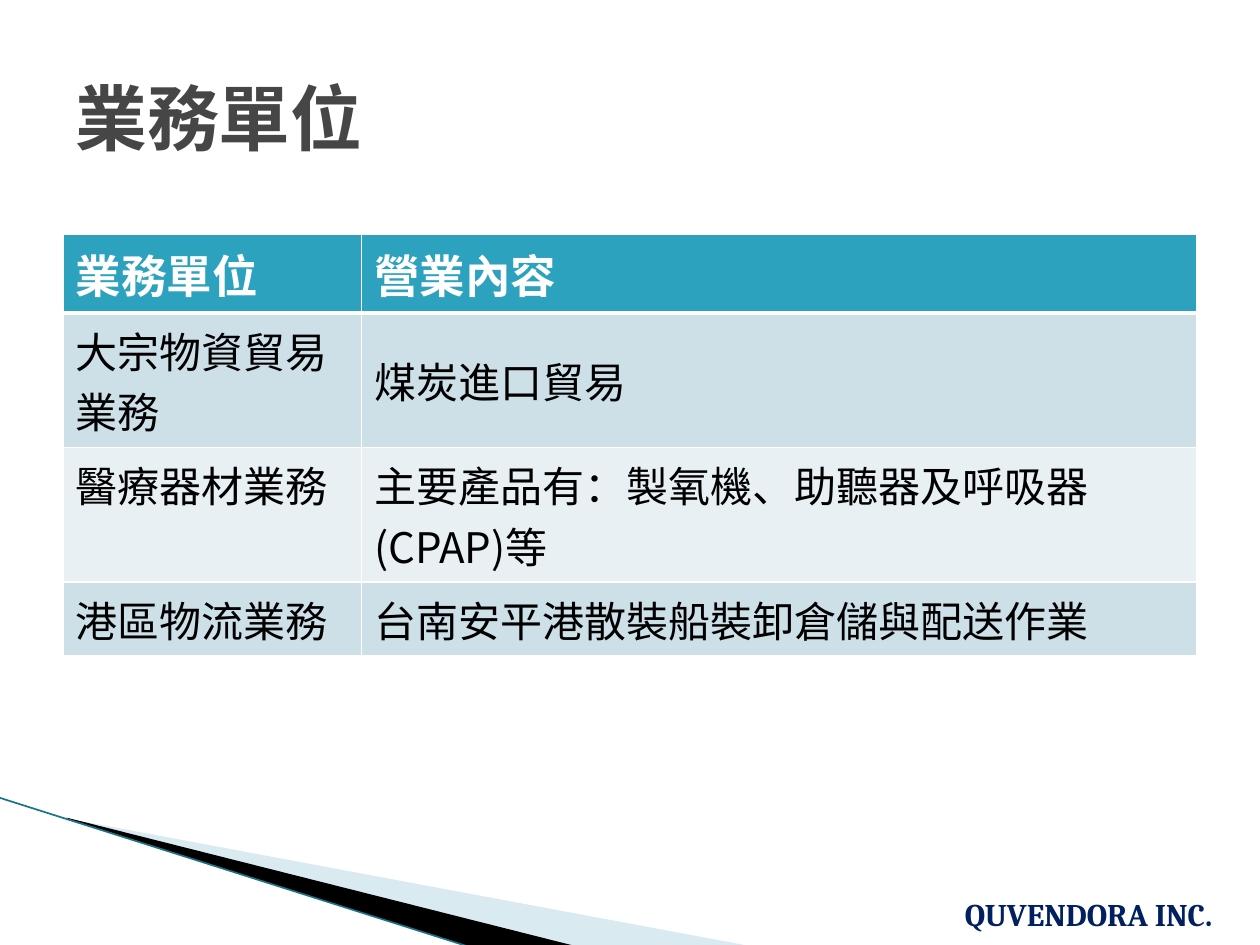
from lxml import etree
from pptx import Presentation
from pptx import util as u
from pptx.dml import color as c
from pptx.enum import text as t
from pptx.oxml import ns

SANS_SC = "Noto Sans CJK SC"
SANS_TC = "Noto Sans CJK TC"
HEADER = ["業務單位", "營業內容"]
UNITS = [
    ("大宗物資貿易業務", [("煤炭進口貿易", SANS_SC)]),
    ("醫療器材業務", [("主要產品有：製氧機", SANS_SC), ("、助聽器及呼吸器", SANS_TC),
                ("(CPAP)", SANS_SC), ("等", SANS_TC)]),
    ("港區物流業務", [("台南安平港散裝船裝卸倉儲與配送作業", SANS_SC)]),
]


def rgb(value):
    return c.RGBColor.from_string(value)


def child(parent, tag, **attributes):
    return etree.SubElement(parent, ns.qn(tag), attributes)


def write(paragraph, pieces, size, color, bold=False):
    for words, font in pieces:
        span = paragraph.add_run()
        span.text = words
        span.font.name = font
        span.font.size = u.Pt(size)
        span.font.bold = bold
        span.font.color.rgb = rgb(color)
        child(span.font._element, "a:ea", typeface=font)


def add_text(page, frame, pieces, size, color, anchor, wrap):
    box = page.shapes.add_textbox(*map(u.Pt, frame))
    box.text_frame.word_wrap = wrap
    box.text_frame.vertical_anchor = anchor
    write(box.text_frame.paragraphs[0], pieces, size, color, True)


def add_wedge(page, points, color, opacity=100):
    corners = [(u.Pt(x), u.Pt(y)) for x, y in points]
    builder = page.shapes.build_freeform(*corners[0], scale=1.0)
    builder.add_line_segments(corners[1:], close=True)
    wedge = builder.convert_to_shape()
    wedge.shadow.inherit = False
    wedge.line.fill.background()
    wedge.fill.solid()
    wedge.fill.fore_color.rgb = rgb(color)
    if opacity < 100:
        tint = wedge._element.spPr.find(".//" + ns.qn("a:srgbClr"))
        child(tint, "a:alpha", val=str(opacity * 1000))


def add_line(page, ends, color, width):
    line = page.shapes.add_connector(1, *map(u.Pt, ends))
    line.line.color.rgb = rgb(color)
    line.line.width = u.Pt(width)
    child(line._element.spPr, "a:effectLst")


def fill_cell(cell, pieces, size, color, background, bottom=1, bold=False):
    write(cell.text_frame.paragraphs[0], pieces, size, color, bold)
    properties = cell._tc.get_or_add_tcPr()
    for side, width in (("L", 1), ("R", 1), ("T", 1), ("B", bottom)):
        border = child(properties, "a:ln" + side, w=str(u.Pt(width)))
        child(child(border, "a:solidFill"), "a:srgbClr", val="FFFFFF")
    cell.fill.solid()
    cell.fill.fore_color.rgb = rgb(background)


def add_units_table(page):
    frame = map(u.Pt, (36, 134, 648, 118))
    table = page.shapes.add_table(len(UNITS) + 1, 2, *frame).table
    for column, width in zip(table.columns, (170.6, 477.4)):
        column.width = u.Pt(width)
    for column, words in enumerate(HEADER):
        fill_cell(table.cell(0, column), [(words, SANS_SC)], 26, "FFFFFF", "2DA2BF", 3, True)
    for row, (unit, business) in enumerate(UNITS, 1):
        background = "CDE0E8" if row % 2 else "E8F0F4"
        fill_cell(table.cell(row, 0), [(unit, SANS_SC)], 24, "000000", background)
        fill_cell(table.cell(row, 1), business, 24, "000000", background)
        table.cell(row, 1).vertical_anchor = t.MSO_ANCHOR.MIDDLE


def main():
    deck = Presentation()
    deck.slide_width, deck.slide_height = u.Pt(720), u.Pt(540)
    page = deck.slides.add_slide(deck.slide_layouts[6])
    add_wedge(page, [(39.6, 468), (428, 540.5), (328, 540.5)], "A0CBDC", 40)
    add_wedge(page, [(38.2, 467.3), (329, 540.7), (268, 541), (39, 468)], "000000")
    add_line(page, (-0.5, 455.8, 268, 541), "1A7286", 0.95)
    add_units_table(page)
    add_text(page, (36, 21.6, 648, 90), [("業務單位", SANS_SC)], 41, "464646",
             t.MSO_ANCHOR.MIDDLE, True)
    add_text(page, (544.3, 507.6, 170.6, 29), [("QUVENDORA INC.", "Cambria")], 18, "002060",
             t.MSO_ANCHOR.TOP, False)
    deck.save("out.pptx")


if __name__ == "__main__":
    main()
